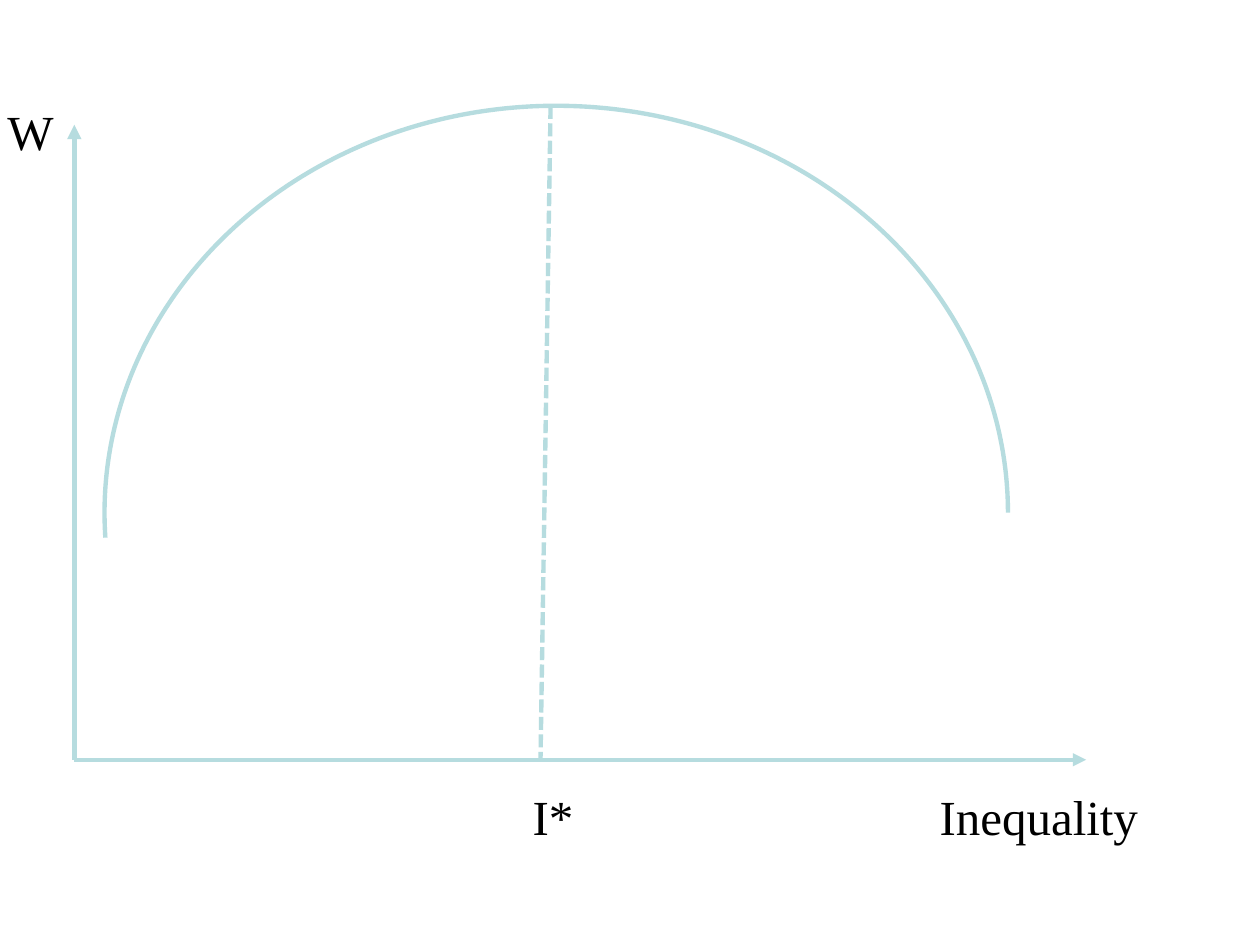
from lxml import etree
from pptx import Presentation, util as u
from pptx.dml.color import RGBColor
from pptx.enum import dml, shapes, text
from pptx.oxml import ns

TEAL = RGBColor(0xB6, 0xDC, 0xDF)
BLACK = RGBColor(0, 0, 0)
FONT = "Times New Roman"
WIDTH, HEIGHT = u.Inches(10), u.Inches(7.5)
COLS, ROWS = 1000, 750


def col(n):
    return round(WIDTH * n / COLS)


def row(n):
    return round(HEIGHT * n / ROWS)


def add_line(s, start, end, weight=2.5, arrow=False, dash=None):
    c = s.shapes.add_connector(
        shapes.MSO_CONNECTOR.STRAIGHT,
        col(start[0]), row(start[1]), col(end[0]), row(end[1]))
    c.line.color.rgb = TEAL
    c.line.width = u.Pt(weight)
    if dash:
        c.line.dash_style = dash
    if arrow:
        etree.SubElement(c.line._get_or_add_ln(), ns.qn("a:tailEnd"), type="triangle")
    etree.SubElement(c._element.spPr, ns.qn("a:effectLst"))


def add_label(s, label, x, y, w, h=57):
    sp = s.shapes.add_textbox(col(x), row(y), col(w), row(h))
    tf = sp.text_frame
    tf.text = label
    tf.word_wrap = True
    tf.auto_size = text.MSO_AUTO_SIZE.SHAPE_TO_FIT_TEXT
    font = tf.paragraphs[0].runs[0].font
    font.name, font.size = FONT, u.Pt(28)
    font.color.rgb = BLACK


def add_axes(s, x, y, w, h):
    origin = x, y + h
    add_line(s, origin, (x, y), 2.75, arrow=True)
    add_line(s, origin, (x + w, y + h), arrow=True)
    add_label(s, "W", x - 63, y - 23, 47)
    add_label(s, "Inequality", x + w - 126, y + h + 16, 220)


def add_welfare_curve(s, x, y, w, h):
    sp = s.shapes.add_shape(shapes.MSO_SHAPE.ARC, col(x), row(y), col(w), row(h))
    sp.adjustments[0], sp.adjustments[1] = 106.104, 0
    sp.shadow.inherit = False
    sp.fill.background()
    sp.line.color.rgb = TEAL
    sp.line.width = u.Pt(2.5)


def add_optimum(s, x, y, w, h):
    add_line(s, (x + w, y), (x, y + h), dash=dml.MSO_LINE.SQUARE_DOT)
    add_label(s, "I*", x - 16, y + h + 16, 63)


def main():
    prs = Presentation()
    prs.slide_width, prs.slide_height = WIDTH, HEIGHT
    s = prs.slides.add_slide(prs.slide_layouts[6])
    add_axes(s, 59, 99, 803, 504)
    add_welfare_curve(s, 83, 84, 717, 646)
    add_optimum(s, 429, 84, 8, 519)
    prs.save("out.pptx")


if __name__ == "__main__":
    main()
